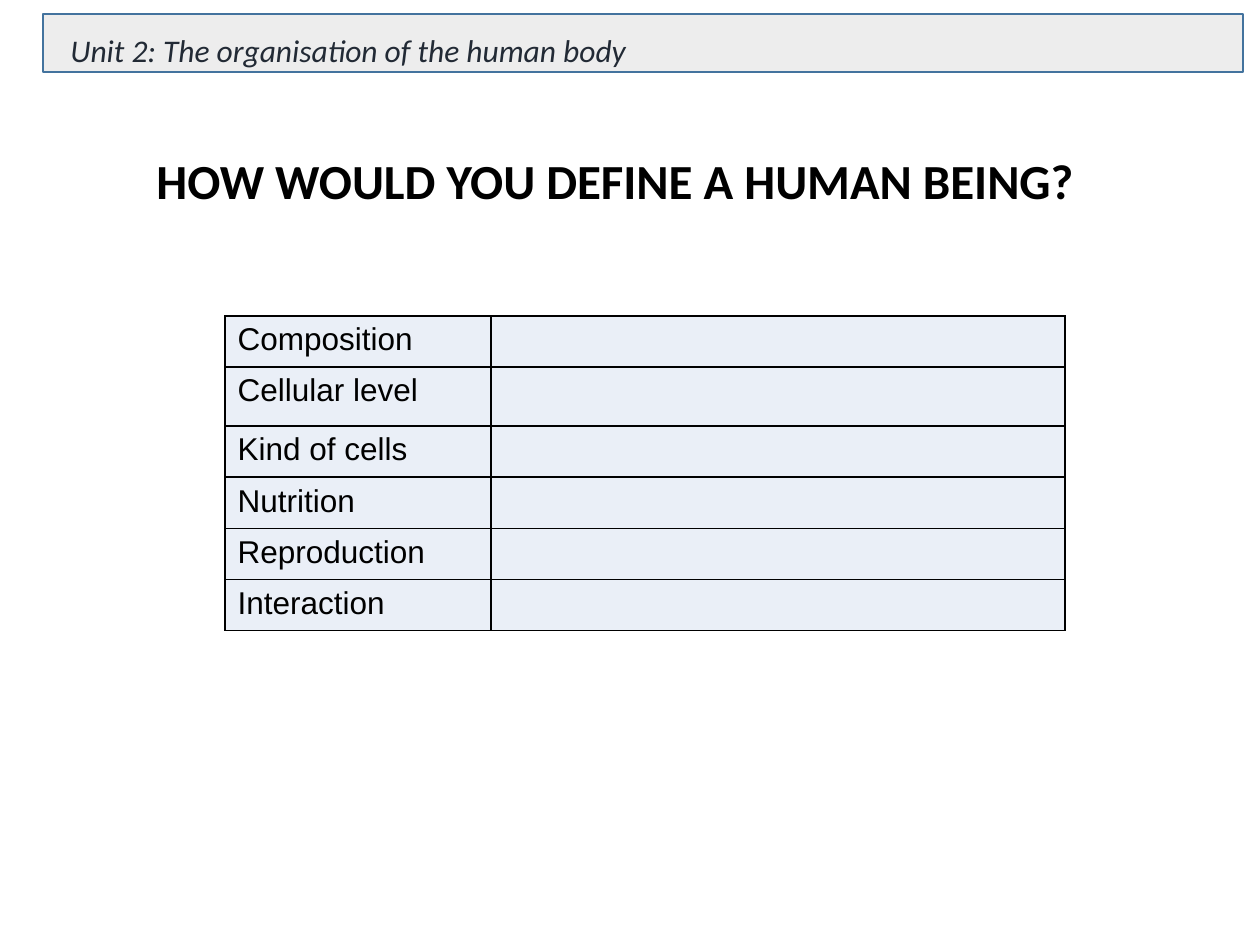
from pptx import Presentation
from pptx.dml.color import RGBColor
from pptx.enum.shapes import MSO_SHAPE
from pptx.oxml import parse_xml
from pptx.oxml.ns import nsdecls
from pptx.util import Pt

SCALE = 914400 / 126
COLORS = {
    "black": "000000",
    "unit": "222A35",
    "bar": "EDEDED",
    "edge": "43739E",
    "cell": "EAEFF7",
}
LABELS = ["Composition", "Cellular level", "Kind of cells",
          "Nutrition", "Reproduction", "Interaction"]


def emu(px):
    return round(px * SCALE)


def color(name):
    return RGBColor.from_string(COLORS[name])


def paint(item, name):
    item.fill.solid()
    item.fill.fore_color.rgb = color(name)


def write(frame, text, size=18, face="Calibri", tint="black", bold=False, italic=False):
    para = frame.paragraphs[0]
    run = para.add_run()
    run.text = text
    font = run.font
    font.size, font.name = Pt(size), face
    font.bold, font.italic = bold, italic
    font.color.rgb = color(tint)


def add_text(slide, x, y, w, h, text, **style):
    box = slide.shapes.add_textbox(emu(x), emu(y), emu(w), emu(h))
    box.text_frame.word_wrap = True
    write(box.text_frame, text, **style)


def add_edges(cell):
    props = cell._tc.get_or_add_tcPr()
    for place, side in enumerate(("lnL", "lnR", "lnT", "lnB")):
        # Borders come before the fill in the cell properties
        props.insert(place, parse_xml(
            f'<a:{side} {nsdecls("a")} w="{Pt(1)}"><a:solidFill>'
            f'<a:srgbClr val="{COLORS["black"]}"/></a:solidFill></a:{side}>'))


def add_header(slide, x, y, w, h):
    # Bar with the unit name
    bar = slide.shapes.add_shape(MSO_SHAPE.RECTANGLE, emu(x), emu(y), emu(w), emu(h))
    bar.shadow.inherit = False
    paint(bar, "bar")
    bar.line.color.rgb = color("edge")
    bar.line.width = Pt(1)
    add_text(slide, x + 15, y + 11, 663, 50,
             "Unit 2: The organisation of the human body", tint="unit", italic=True)


def add_grid(slide, x, y, w, h):
    # Labels on the left, blank answers on the right
    count = len(LABELS)
    first, row, tall = 266, 51, 59
    table = slide.shapes.add_table(count, 2, emu(x), emu(y), emu(w), emu(h)).table
    table.first_row = table.horz_banding = False
    table.columns[0].width = emu(first)
    table.columns[1].width = emu(w - first)
    for i, label in enumerate(LABELS):
        table.rows[i].height = emu(tall if label == "Cellular level" else row)
        write(table.cell(i, 0).text_frame, label, face="Arial")
    for cell in table.iter_cells():
        paint(cell, "cell")
        add_edges(cell)


def main():
    deck = Presentation()
    deck.slide_width, deck.slide_height = emu(1260), emu(945)
    slide = deck.slides.add_slide(deck.slide_layouts[6])
    add_grid(slide, 225, 316, 840, 314)
    # Question
    add_text(slide, 144, 144, 951, 72, "HOW WOULD YOU DEFINE A HUMAN BEING?",
             size=28, bold=True)
    add_header(slide, 43, 14, 1200, 58)
    deck.save("out.pptx")


if __name__ == "__main__":
    main()
